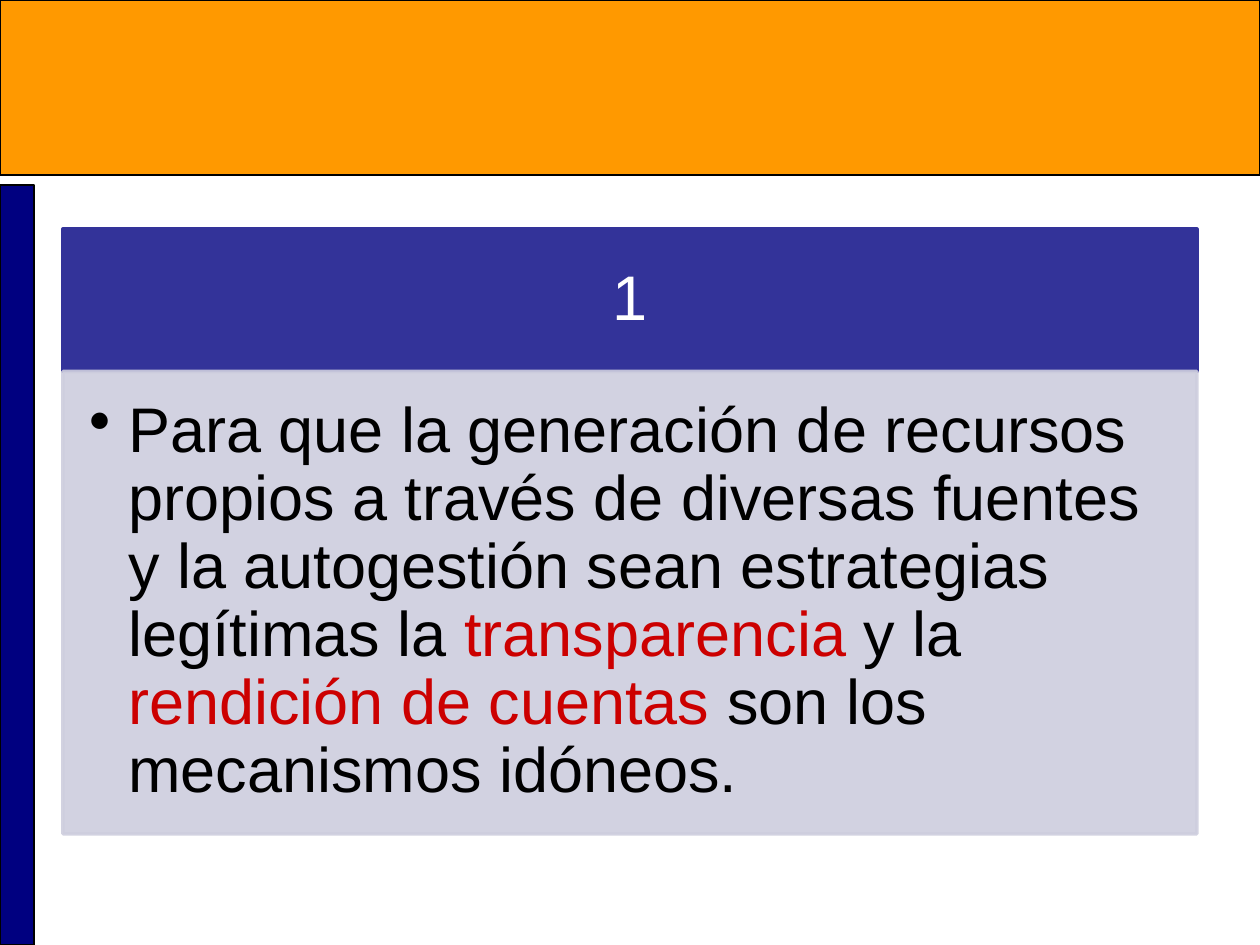
"""Build a slide with a numbered heading over a bulleted statement."""
from lxml import etree
from pptx import Presentation
from pptx.dml.color import RGBColor
from pptx.enum.shapes import MSO_SHAPE
from pptx.enum.text import MSO_ANCHOR, PP_ALIGN
from pptx.oxml.ns import qn
from pptx.util import Cm, Pt

RECT = MSO_SHAPE.RECTANGLE
TOP, MIDDLE = MSO_ANCHOR.TOP, MSO_ANCHOR.MIDDLE
LEFT, CENTER = PP_ALIGN.LEFT, PP_ALIGN.CENTER


def rgb(value):
    return RGBColor.from_string(value)


def write(sp, runs, size=36, font="Arial", align=LEFT, anchor=TOP, insets=(0, 0, 0, 0), bullet=False):
    tf = sp.text_frame
    tf.word_wrap = True
    tf.vertical_anchor = anchor
    tf.margin_left, tf.margin_top, tf.margin_right, tf.margin_bottom = map(Cm, insets)
    p = tf.paragraphs[0]
    p.alignment = align
    p.line_spacing = 0.9
    if bullet:
        pPr = p._p.get_or_add_pPr()
        pPr.set("marL", str(Cm(0.79)))
        pPr.set("indent", str(Cm(-0.79)))
        etree.SubElement(pPr, qn("a:buChar"), char="•")
    for text, color in runs:
        r = p.add_run()
        r.text = text
        r.font.size = Pt(size)
        r.font.name = font
        r.font.color.rgb = rgb(color)


prs = Presentation()
prs.slide_width, prs.slide_height = Cm(25.4), Cm(19.05)
s = prs.slides.add_slide(prs.slide_layouts[6])

shapes = []
for left, top, width, height, fill, line, weight in [
    (0, 0, 25.4, 3.53, "FF9900", "000000", 0.75),
    (0, 3.73, 0.69, 15.32, "000080", "000000", 0.75),
    (1.27, 4.62, 22.86, 2.87, "333399", "333399", 2),
    (1.27, 7.49, 22.86, 9.32, "CECEDE", "CECEDE", 2),
]:
    sp = s.shapes.add_shape(RECT, Cm(left), Cm(top), Cm(width), Cm(height))
    sp.shadow.inherit = False
    sp.fill.solid()
    sp.fill.fore_color.rgb = rgb(fill)
    sp.line.color.rgb = rgb(line)
    sp.line.width = Pt(weight)
    shapes.append(sp)

heading, body = shapes[2:]
for color in body._element.spPr.iter(qn("a:srgbClr")):
    etree.SubElement(color, qn("a:alpha"), val="90000")

write(heading, [("1", "FFFFFF")], align=CENTER, anchor=MIDDLE, insets=(0.71, 0.41, 0.71, 0.41))
write(body, [
    ("Para que la generación de recursos propios a través de diversas fuentes "
     "y la autogestión sean estrategias legítimas la", "000000"),
    (" transparencia ", "CC0000"),
    ("y la ", "000000"),
    ("rendición de cuentas ", "CC0000"),
    ("son los mecanismos idóneos.", "000000"),
], insets=(0.53, 0.53, 0.71, 0.81), bullet=True)

prs.save("out.pptx")
